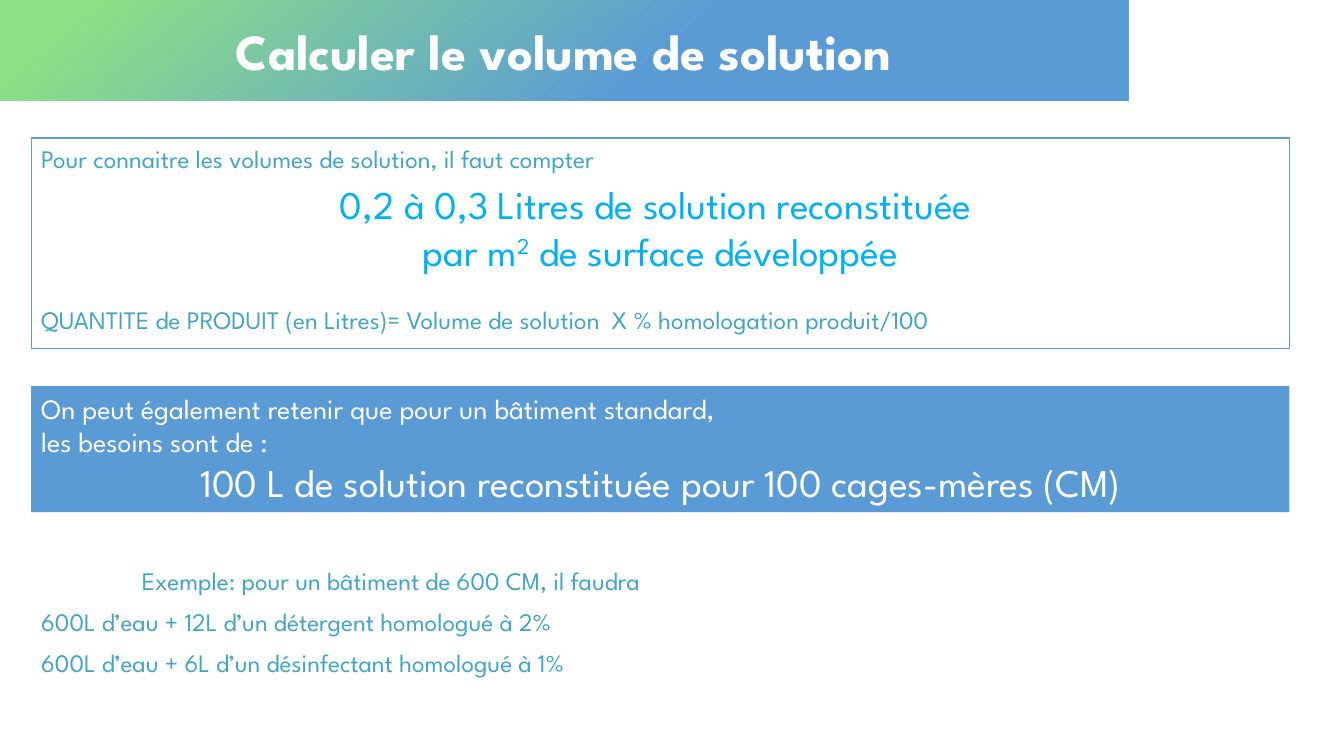
from pptx import Presentation
from pptx.dml.color import RGBColor
from pptx.enum.shapes import MSO_SHAPE
from pptx.enum.text import MSO_ANCHOR, PP_ALIGN
from pptx.util import Inches, Pt

COLORS = {
    "white": "FFFFFF",
    "green": "8EE185",
    "blue": "5B9BD5",
    "teal": "46A4C2",
    "cyan": "00B0F0",
}
FONT = "League Spartan"
LEFT, PANEL_WIDTH = Inches(0.31), Inches(12.48)


def color(name):
    return RGBColor.from_string(COLORS[name])


def write(paragraph, text, size, ink, align=PP_ALIGN.LEFT, before=None):
    paragraph.text = text
    paragraph.alignment = align
    if before is not None:
        paragraph.space_before = Pt(before)
    paragraph.font.name = FONT
    paragraph.font.size = Pt(size)
    paragraph.font.color.rgb = color(ink)


prs = Presentation()
prs.slide_width, prs.slide_height = Inches(13.33), Inches(7.5)
slide = prs.slides.add_slide(prs.slide_layouts[5])

# Title band with a green to blue gradient
title = slide.shapes.title
title.left, title.top = Inches(-0.01), Inches(0)
title.width, title.height = Inches(11.2), Inches(1)
title.fill.gradient()
title.fill.gradient_angle = 310
for stop, (name, position) in zip(title.fill.gradient_stops,
                                  [("green", 0.07), ("blue", 0.59)]):
    stop.color.rgb = color(name)
    stop.position = position
title.text_frame.vertical_anchor = MSO_ANCHOR.MIDDLE
heading = title.text_frame.paragraphs[0]
write(heading, "Calculer le volume de solution", 36, "white", PP_ALIGN.CENTER)
heading.font.bold = True

# Two panels: the volume rule and the rule of thumb
panels = []
for top, height, fill in [(1.37, 2.09, "white"), (3.83, 1.25, "blue")]:
    panel = slide.shapes.add_shape(MSO_SHAPE.RECTANGLE, LEFT, Inches(top),
                                   PANEL_WIDTH, Inches(height))
    panel.shadow.inherit = False
    panel.fill.solid()
    panel.fill.fore_color.rgb = color(fill)
    panel.line.color.rgb = color("blue")
    panel.line.width = Pt(1)
    panel.text_frame.word_wrap = True
    panel.text_frame.vertical_anchor = MSO_ANCHOR.TOP
    panels.append(panel)
volume_rule, thumb_rule = (panel.text_frame for panel in panels)
thumb_panel = panels[1]
thumb_panel.line.fill.background()

# Volume rule
write(volume_rule.paragraphs[0],
      "Pour connaitre les volumes de solution, il faut compter", 18, "teal")
dose = volume_rule.add_paragraph()
write(dose, "0,2 à 0,3 Litres de solution reconstituée \vpar m", 28, "cyan",
      PP_ALIGN.CENTER, before=5)
exponent = dose.add_run()
exponent.text = "2"
exponent.font._element.set("baseline", "30000")
dose.add_run().text = " de surface développée"
write(volume_rule.add_paragraph(),
      "QUANTITE de PRODUIT (en Litres)= Volume de solution  X % homologation produit/100",
      18, "teal", before=21)

# Rule of thumb
write(thumb_rule.paragraphs[0],
      "On peut également retenir que pour un bâtiment standard, \vles besoins sont de :",
      20, "white")
write(thumb_rule.add_paragraph(),
      "100 L de solution reconstituée pour 100 cages-mères (CM)",
      28, "white", PP_ALIGN.CENTER)

# Worked example, first line indented
example = slide.shapes.add_textbox(LEFT, Inches(5.59), Inches(12.86), Inches(1)).text_frame
example.word_wrap = True
example_lines = [
    "Exemple: pour un bâtiment de 600 CM, il faudra",
    "600L d’eau + 12L d’un détergent homologué à 2%",
    "600L d’eau + 6L d’un désinfectant homologué à 1%",
]
for i, line in enumerate(example_lines):
    paragraph = example.add_paragraph() if i else example.paragraphs[0]
    write(paragraph, line, 18, "teal", before=10 if i else None)
    paragraph.line_spacing = 0.9
example.paragraphs[0]._p.get_or_add_pPr().set("marL", str(Inches(1)))

prs.save("out.pptx")
